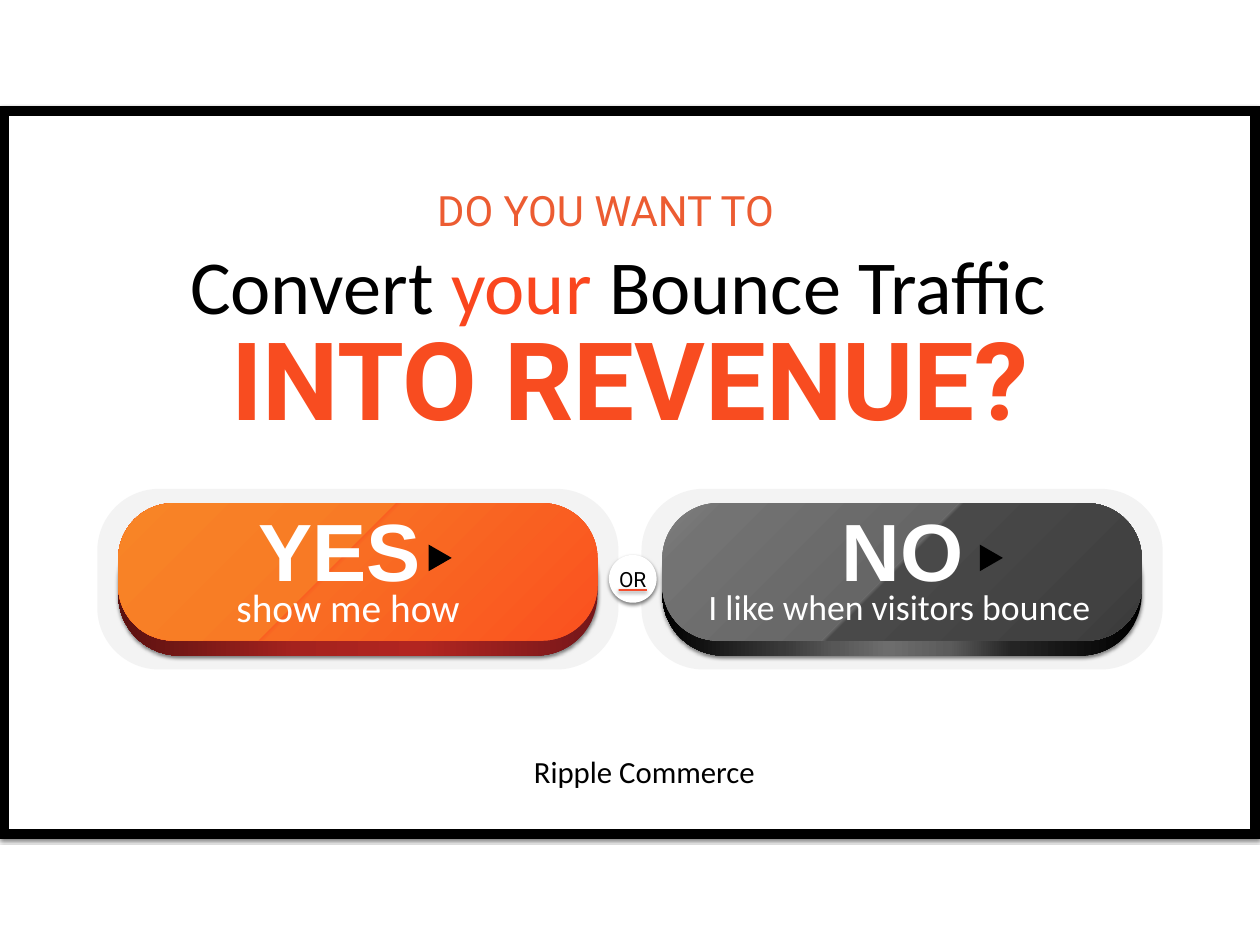
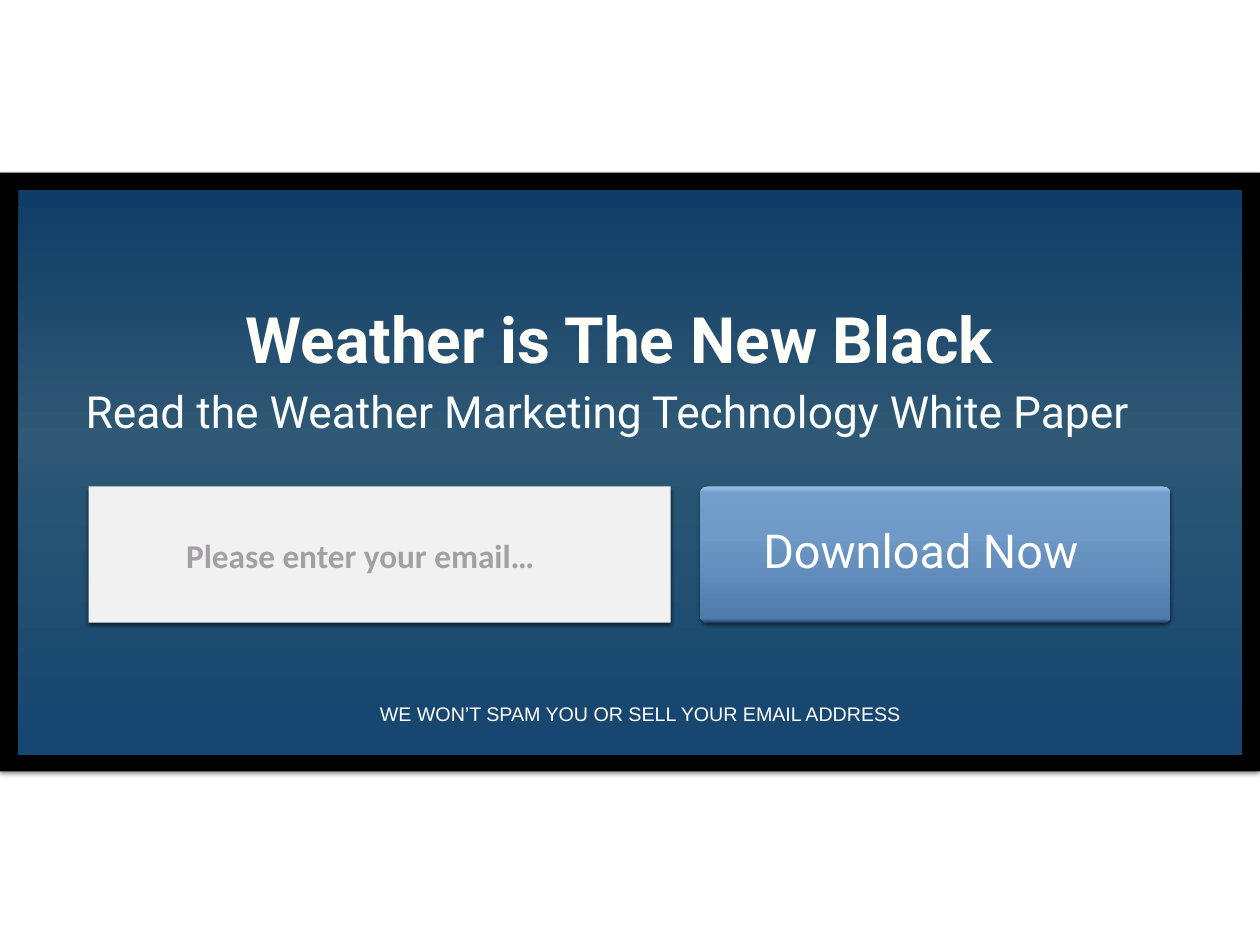
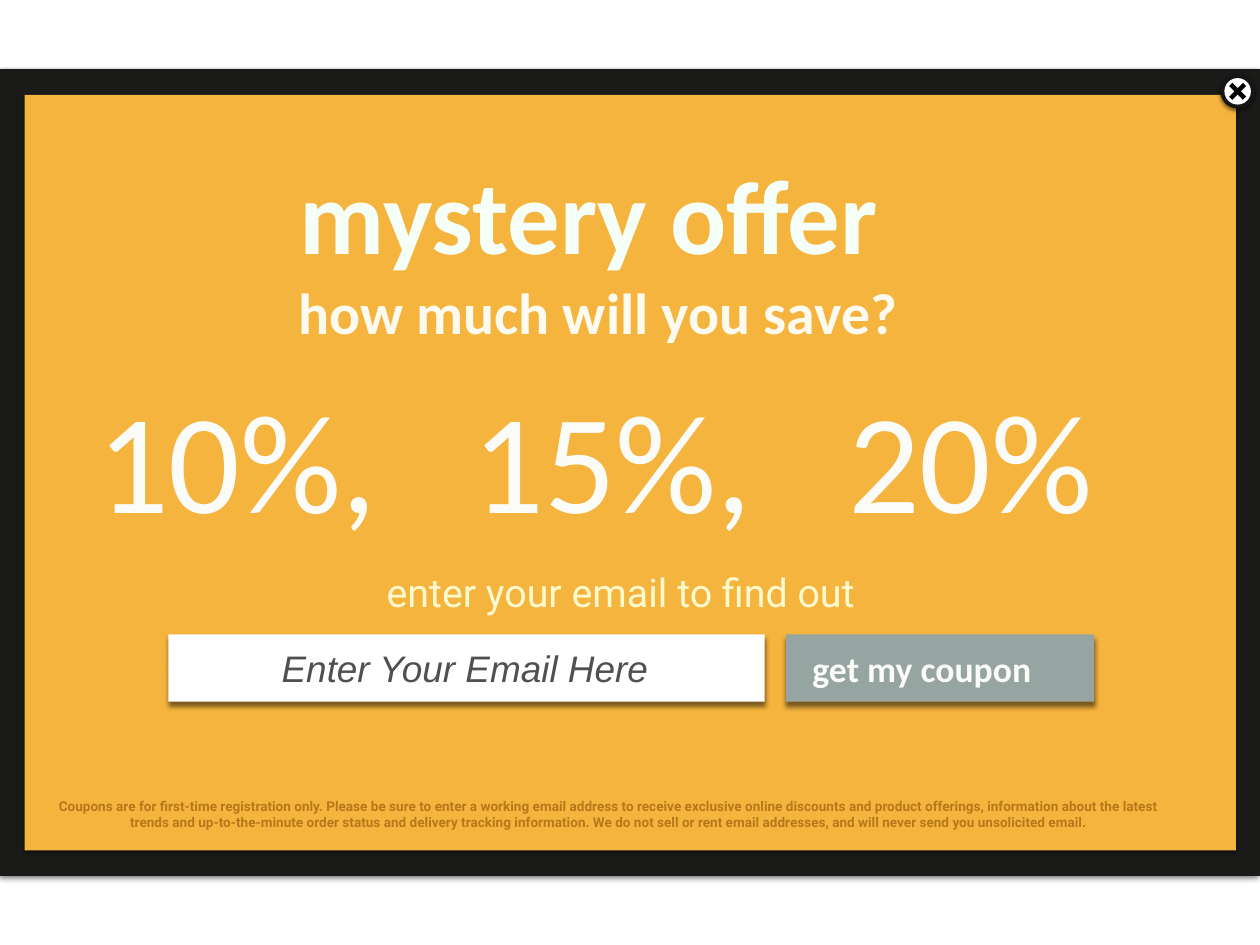
import pptx
import pptx.util
import pptx.dml.color
import pptx.enum.shapes
import pptx.enum.text
import pptx.oxml.ns
from lxml import etree

Cm = pptx.util.Cm
Pt = pptx.util.Pt
RGB = pptx.dml.color.RGBColor
SHAPE = pptx.enum.shapes.MSO_SHAPE
qn = pptx.oxml.ns.qn

# Shared look
SLIDE_W, SLIDE_H = 36.12, 27.1
CALIBRI, ROBOTO, ARIAL = "Calibri", "Roboto", "Arial"
TITLE_ONLY = 5
SOFT_SHADOW = (3, 2)  # blur and distance in points

BLACK = RGB(0x00, 0x00, 0x00)
WHITE = RGB(0xFF, 0xFF, 0xFF)
PLATE_GREY = RGB(0xF3, 0xF3, 0xF3)
FLAME = RGB(0xF8, 0x4C, 0x20)
FLAME_LIGHT = RGB(0xFA, 0x46, 0x1E)
FLAME_SOFT = RGB(0xEC, 0x5C, 0x32)
UNDERLINE_RED = RGB(0xF5, 0x4D, 0x2D)
IVORY = RGB(0xFF, 0xFF, 0xF9)
ICE = RGB(0xFA, 0xFD, 0xFF)
FIELD_GREY = RGB(0xF1, 0xF1, 0xF1)
HINT_GREY = RGB(0xA3, 0xA0, 0xA4)
CHARCOAL = RGB(0x1A, 0x1A, 0x19)
CLOSE_BLACK = RGB(0x15, 0x15, 0x15)
AMBER = RGB(0xF5, 0xB4, 0x3D)
MINT_WHITE = RGB(0xF6, 0xFE, 0xF8)
CREAM = RGB(0xFD, 0xFB, 0xEF)
OFF_WHITE = RGB(0xFB, 0xFB, 0xF8)
PALE_YELLOW = RGB(0xFF, 0xF9, 0xCE)
HINT_DARK = RGB(0x51, 0x50, 0x50)
SAGE = RGB(0x96, 0xA5, 0xA2)
BROWN = RGB(0xB6, 0x78, 0x1B)


def gradient(angle, *stops):
    """Angle in degrees clockwise, stops as (percent, colour)."""
    return angle, [(at, RGB.from_string(colour)) for at, colour in stops]


ORANGE_EDGE = gradient(180, (0, "75171A"), (37, "B22520"), (63, "A5221E"),
                       (100, "5A1110"))
ORANGE_FACE = gradient(225, (0, "FA511F"), (54, "F96D23"), (55, "FA5E21"),
                       (55, "F87A25"), (100, "F88426"))
GREY_EDGE = gradient(180, (0, "000000"), (27, "242424"), (40, "5B5B5B"),
                     (53, "6D6D6D"), (64, "575757"), (75, "393939"),
                     (100, "000000"))
GREY_FACE = gradient(45, (0, "828282"), (11, "737373"), (48, "666666"),
                     (48, "6F6F6F"), (49, "494949"), (86, "414141"),
                     (100, "393939"))
NIGHT_SKY = gradient(90, (0, "103D67"), (45, "2F5974"), (55, "285473"),
                     (100, "154570"))
BLUE_BUTTON = gradient(90, (0, "9CC0E8"), (5, "739ECB"), (36, "6F99C7"),
                       (52, "6791BF"), (97, "4E7BAC"), (100, "183E65"))


def paint_gradient(shape, angle, stops):
    shape.fill.gradient()
    paint = shape.element.spPr.find(qn("a:gradFill"))
    stop_list = paint.find(qn("a:gsLst"))
    for old in list(stop_list):
        stop_list.remove(old)
    for at, colour in stops:
        stop = etree.SubElement(stop_list, qn("a:gs"), pos=str(at * 1000))
        etree.SubElement(stop, qn("a:srgbClr"), val=str(colour))
    direction = paint.find(qn("a:lin"))
    direction.set("ang", str(angle * 60000))
    direction.set("scaled", "0")


def cast_shadow(shape, blur, distance):
    effects = shape.element.spPr.find(qn("a:effectLst"))
    outer = etree.SubElement(
        effects, qn("a:outerShdw"), blurRad=str(int(Pt(blur))),
        dist=str(int(Pt(distance))), dir="5400000", rotWithShape="0")
    colour = etree.SubElement(outer, qn("a:srgbClr"), val=str(BLACK))
    etree.SubElement(colour, qn("a:alpha"), val="50000")


def block(slide, kind, box, fill, shadow=None, corner=None, turn=0):
    """Filled shape without outline; box is left, top, width, height in cm."""
    shape = slide.shapes.add_shape(kind, *map(Cm, box))
    shape.rotation = turn
    shape.shadow.inherit = False
    if isinstance(fill, tuple) and not isinstance(fill, RGB):
        paint_gradient(shape, *fill)
    else:
        shape.fill.solid()
        shape.fill.fore_color.rgb = fill
    shape.line.fill.background()
    if corner is not None:
        shape.adjustments[0] = corner
    if shadow:
        cast_shadow(shape, *shadow)
    return shape


def centred(x, y, width, height):
    return x - width / 2, y - height / 2, width, height


def write(slide, centre, size, lines, points, font, colour, bold=False,
          italic=False, title=False):
    """Centred text; each line is a list of runs (text, own colour)."""
    if title:
        holder = slide.shapes.title
        # The title is brought in front of the panel
        holder.element.getparent().append(holder.element)
        holder.left, holder.top, holder.width, holder.height = map(
            Cm, centred(*centre, *size))
    else:
        holder = slide.shapes.add_textbox(*map(Cm, centred(*centre, *size)))
    frame = holder.text_frame
    frame.word_wrap = True
    frame.auto_size = pptx.enum.text.MSO_AUTO_SIZE.NONE
    frame.vertical_anchor = pptx.enum.text.MSO_ANCHOR.MIDDLE
    frame.margin_left = frame.margin_right = 0
    frame.margin_top = frame.margin_bottom = 0
    if isinstance(lines, str):
        lines = [[(lines, colour)]]
    for number, runs in enumerate(lines):
        paragraph = frame.add_paragraph() if number else frame.paragraphs[0]
        paragraph.alignment = pptx.enum.text.PP_ALIGN.CENTER
        for words, run_colour in runs:
            run = paragraph.add_run()
            run.text = words
            run.font.name = font
            run.font.size = Pt(points)
            run.font.bold = bold
            run.font.italic = italic
            run.font.color.rgb = run_colour


def framed_panel(slide, outer, inner, border, fill):
    for box, colour in ((outer, border), (inner, fill)):
        block(slide, SHAPE.RECTANGLE, box, colour, SOFT_SHADOW)


# Slide 1: question with two answers
def outlined_panel(slide, box):
    panel = block(slide, SHAPE.RECTANGLE, box, WHITE, SOFT_SHADOW)
    panel.line.color.rgb = BLACK
    panel.line.width = Pt(8)
    # Square corners
    outline = panel.element.spPr.find(qn("a:ln"))
    etree.SubElement(outline, qn("a:miter"), lim="800000")


def answer_button(slide, left, top, face, edge, answer, answer_x, caption,
                  caption_x, caption_points, arrow_x):
    rounded = SHAPE.ROUNDED_RECTANGLE
    block(slide, rounded, (left, top, 14.94, 5.18), PLATE_GREY, corner=0.343)
    block(slide, rounded, (left + 0.6, top + 0.84, 13.74, 3.94), edge,
          SOFT_SHADOW, 0.445)
    block(slide, rounded, (left + 0.6, top + 0.41, 13.74, 3.94), face,
          corner=0.402)
    write(slide, (left + answer_x, top + 1.72), (6, 3.1), answer, 66, ARIAL,
          WHITE, bold=True)
    write(slide, (left + caption_x, top + 3.38), (12.5, 1.4), caption,
          caption_points, CALIBRI, WHITE)
    block(slide, SHAPE.ISOSCELES_TRIANGLE,
          centred(left + arrow_x, top + 1.98, 0.76, 0.66), BLACK, turn=90)


def or_badge(slide, x, y):
    block(slide, SHAPE.OVAL, centred(x, y, 1.37, 1.37), WHITE, SOFT_SHADOW)
    write(slide, (x, y), (1.37, 1), "OR", 17, ROBOTO, BLACK)
    block(slide, SHAPE.RECTANGLE, centred(x, y + 0.32, 0.81, 0.05),
          UNDERLINE_RED, SOFT_SHADOW)


def question_slide(slide):
    outlined_panel(slide, (0.13, 3.18, 35.86, 20.73))
    write(slide, (17.36, 6.03), (11, 1.65), "DO YOU WANT TO", 34, ROBOTO,
          FLAME_SOFT)
    write(slide, (17.72, 8.15), (27.5, 3.45),
          [[("Convert ", BLACK), ("your", FLAME_LIGHT),
            (" Bounce Traffic", BLACK)]], 62, CALIBRI, BLACK, title=True)
    write(slide, (18.06, 10.82), (30.2, 3.76), "INTO REVENUE?", 88, ROBOTO,
          FLAME, bold=True)

    answer_button(slide, 2.79, 14.02, ORANGE_FACE, ORANGE_EDGE, "YES", 6.95,
                  "show me how", 7.19, 32, 9.83)
    answer_button(slide, 18.39, 14.02, GREY_FACE, GREY_EDGE, "NO", 7.48,
                  "I like when visitors bounce", 7.4, 29, 10.03)
    or_badge(slide, 18.14, 16.6)
    # Sender's name
    write(slide, (18.47, 22.11), (7.7, 1.85), "Ripple Commerce", 25, CALIBRI,
          BLACK)


# Slide 2: white paper sign-up
def white_paper_form(slide, left, top):
    height = 3.91
    block(slide, SHAPE.RECTANGLE, (left, top, 16.69, height), FIELD_GREY,
          SOFT_SHADOW)
    write(slide, (left + 7.79, top + 1.96), (12, 1.57),
          "Please enter your email…", 27, CALIBRI, HINT_GREY, bold=True)
    block(slide, SHAPE.ROUNDED_RECTANGLE, (left + 17.53, top, 13.49, height),
          BLUE_BUTTON, SOFT_SHADOW, 0.057)
    write(slide, (left + 23.86, top + 1.83), (11, 2.29), "Download Now", 38,
          ROBOTO, WHITE)


def white_paper_slide(slide):
    framed_panel(slide, (0, 4.95, SLIDE_W, 17.17), (0.53, 5.46, 35.08, 16.18),
                 BLACK, NIGHT_SKY)
    write(slide, (17.75, 9.68), (24, 2.8), "Weather is The New Black", 52,
          ROBOTO, IVORY, bold=True, title=True)
    write(slide, (17.41, 11.77), (32, 2),
          "Read the Weather Marketing Technology White Paper", 36, ROBOTO,
          ICE)
    white_paper_form(slide, 2.54, 13.95)
    write(slide, (18.36, 20.47), (17, 1),
          "WE WON’T SPAM YOU OR SELL YOUR EMAIL ADDRESS", 16, ARIAL, WHITE)


# Slide 3: coupon offer
def coupon_form(slide, left, top):
    height = 1.93
    middle = top + height / 2
    block(slide, SHAPE.RECTANGLE, (left, top, 17.09, height), WHITE, (4, 3.7))
    write(slide, (left + 8.5, middle), (12, 1.55), "Enter Your Email Here",
          30, ARIAL, HINT_DARK, italic=True)
    block(slide, SHAPE.RECTANGLE, (left + 17.7, top, 8.84, height), SAGE,
          (4, 4.4))
    write(slide, (left + 21.6, middle), (7.6, 1.7), "get my coupon", 29,
          CALIBRI, OFF_WHITE, bold=True)


def close_button(slide, x, y):
    block(slide, SHAPE.OVAL, centred(x, y, 0.99, 0.99), CLOSE_BLACK,
          SOFT_SHADOW)
    block(slide, SHAPE.OVAL, centred(x, y, 0.76, 0.76), WHITE)
    for turn in (45, 315):
        block(slide, SHAPE.RECTANGLE, centred(x, y, 0.56, 0.13), BLACK,
              turn=turn)


def coupon_slide(slide):
    framed_panel(slide, (0, 1.98, SLIDE_W, 23.14), (0.71, 2.72, 34.72, 21.67),
                 CHARCOAL, AMBER)
    write(slide, (16.88, 6.1), (19, 4.37), "mystery offer", 85, CALIBRI,
          MINT_WHITE, bold=True, title=True)
    write(slide, (17.15, 8.92), (19, 2.54), "how much will you save?", 47,
          CALIBRI, CREAM, bold=True)
    for discount, x in (("10%,", 6.8), ("15%,", 17.56), ("20%", 27.82)):
        write(slide, (x, 13.1), (9.7, 5.54), discount, 115, CALIBRI,
              OFF_WHITE)
    write(slide, (17.8, 16.97), (15, 1.83), "enter your email to find out",
          32, ROBOTO, PALE_YELLOW)
    coupon_form(slide, 4.83, 18.19)
    terms = (
        "Coupons are for first-time registration only. Please be sure to "
        "enter a working email address to receive exclusive online discounts "
        "and product offerings, information about the latest",
        "trends and up-to-the-minute order status and delivery tracking "
        "information. We do not sell or rent email addresses, and will never "
        "send you unsolicited email.",
    )
    write(slide, (17.46, 23.34), (33, 1.35),
          [[(line, BROWN)] for line in terms], 11, ROBOTO, BROWN, bold=True)
    close_button(slide, 35.48, 2.62)


def main():
    deck = pptx.Presentation()
    deck.slide_width, deck.slide_height = Cm(SLIDE_W), Cm(SLIDE_H)
    for build in (question_slide, white_paper_slide, coupon_slide):
        build(deck.slides.add_slide(deck.slide_layouts[TITLE_ONLY]))
    deck.save("out.pptx")


if __name__ == "__main__":
    main()
